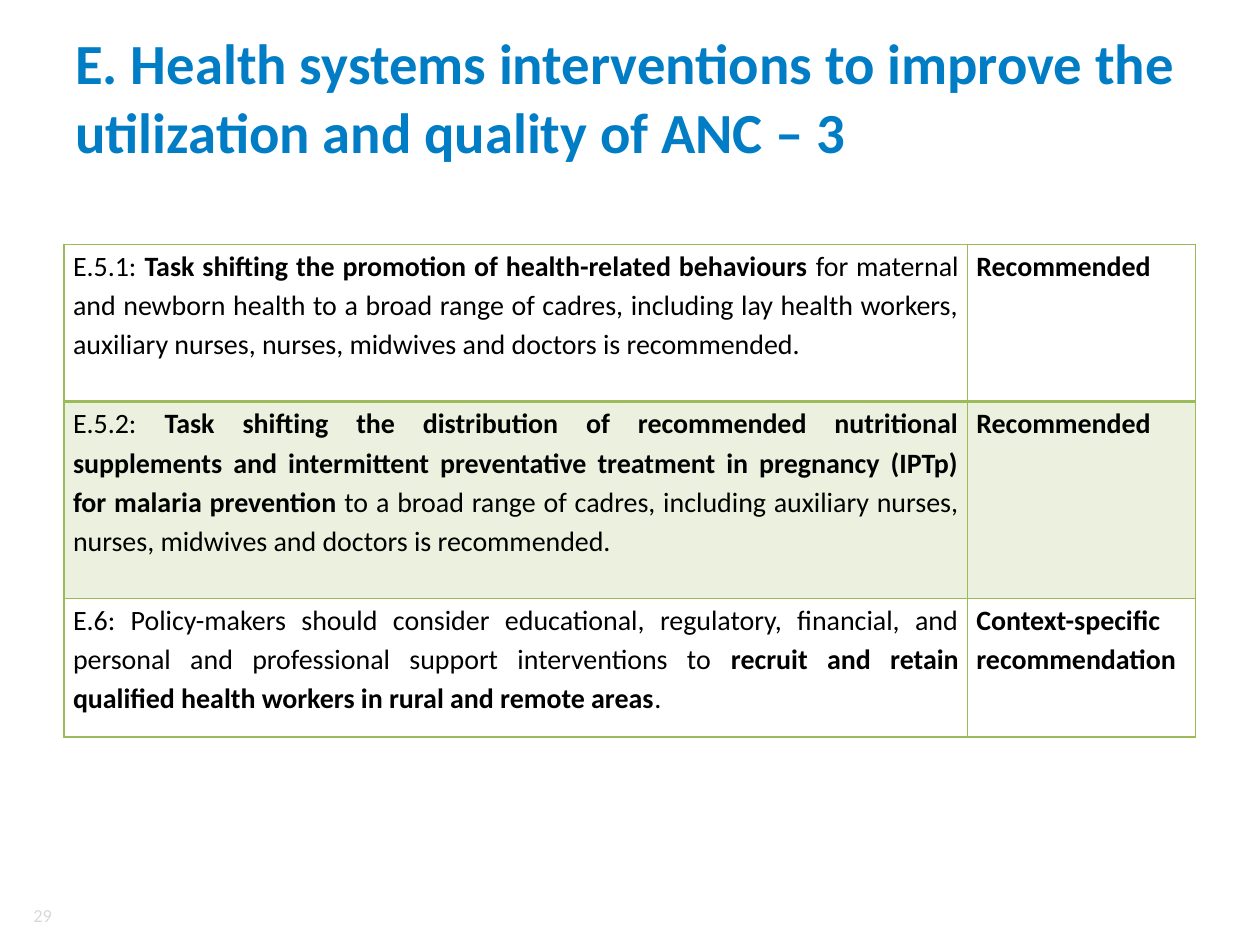
from lxml import etree
from pptx import Presentation
from pptx.dml.color import RGBColor
from pptx.enum.text import MSO_ANCHOR, PP_ALIGN
from pptx.oxml.ns import qn
from pptx.util import Inches, Pt

BLUE = RGBColor(0x00, 0x7D, 0xC5)
GREEN = RGBColor(0x9B, 0xBB, 0x59)
PALE_GREEN = RGBColor(0xEB, 0xF1, 0xDE)
GREY = RGBColor(0xD9, 0xD9, 0xD9)
BLACK = RGBColor(0, 0, 0)
FONT = "Calibri"

TITLE = "E. Health systems interventions to improve the utilization and quality of ANC – 3"
COLUMN_WIDTHS = (7.17, 1.81)
ROW_HEIGHTS = (1.25, 1.56, 1.1)
RECOMMENDATIONS = [
    (
        ("E.5.1: ",
         "Task shifting the promotion of health-related behaviours",
         " for maternal and newborn health to a broad range of cadres, including lay "
         "health workers, auxiliary nurses, nurses, midwives and doctors is recommended."),
        "Recommended",
    ),
    (
        ("E.5.2: ",
         "Task shifting the distribution of recommended nutritional supplements and "
         "intermittent preventative treatment in pregnancy (IPTp) for malaria prevention",
         " to a broad range of cadres, including auxiliary nurses, nurses, midwives "
         "and doctors is recommended."),
        "Recommended",
    ),
    (
        ("E.6: Policy-makers should consider educational, regulatory, financial, and "
         "personal and professional support interventions to ",
         "recruit and retain qualified health workers in rural and remote areas",
         "."),
        "Context-specific recommendation",
    ),
]


def style_font(font, size, color, bold=False):
    font.name = FONT
    font.size = Pt(size)
    font.color.rgb = color
    font.bold = bold


def add_label(slide, box, text, size, color, bold=False, align=PP_ALIGN.LEFT):
    s = slide.shapes.add_textbox(*map(Inches, box))
    tf = s.text_frame
    tf.word_wrap = True
    tf.vertical_anchor = MSO_ANCHOR.MIDDLE
    tf.text = text
    p = tf.paragraphs[0]
    p.alignment = align
    style_font(p.runs[0].font, size, color, bold)


def set_borders(cell, widths):
    tc_pr = cell._tc.get_or_add_tcPr()
    for side, width in widths.items():
        ln = etree.SubElement(tc_pr, qn(f"a:ln{side}"), w=str(Pt(width)))
        fill = etree.SubElement(ln, qn("a:solidFill"))
        etree.SubElement(fill, qn("a:srgbClr"), val=str(GREEN))


def fill_cell(cell, runs):
    cell.margin_left = cell.margin_right = Inches(0.07)
    cell.margin_top = cell.margin_bottom = 0
    p = cell.text_frame.paragraphs[0]
    p.alignment = PP_ALIGN.JUSTIFY
    p.line_spacing = 1.15
    for text, bold in runs:
        r = p.add_run()
        r.text = text
        style_font(r.font, 16, BLACK, bold)


def add_recommendations(slide, left, top):
    box = (left, top, sum(COLUMN_WIDTHS), sum(ROW_HEIGHTS))
    s = slide.shapes.add_table(len(ROW_HEIGHTS), len(COLUMN_WIDTHS), *map(Inches, box))
    table = s.table
    table.first_row = table.horz_banding = False
    for column, width in zip(table.columns, COLUMN_WIDTHS):
        column.width = Inches(width)
    for i, (advice, status) in enumerate(RECOMMENDATIONS):
        row = table.rows[i]
        row.height = Inches(ROW_HEIGHTS[i])
        fill_cell(row.cells[0], zip(advice, (False, True, False)))
        fill_cell(row.cells[1], [(status, True)])
        for cell in row.cells:
            set_borders(cell, {"L": 1, "R": 1, "T": 2 if i == 1 else 1, "B": 2 if i == 0 else 1})
            if i % 2:
                cell.fill.solid()
                cell.fill.fore_color.rgb = PALE_GREEN
            else:
                cell.fill.background()


def main():
    prs = Presentation()
    prs.slide_width, prs.slide_height = Inches(10), Inches(7.5)
    slide = prs.slides.add_slide(prs.slide_layouts[6])
    add_label(slide, (0.12, 7.14, 0.39, 0.24), "29", 10.5, GREY, align=PP_ALIGN.RIGHT)
    add_label(slide, (0.5, 0.3, 9, 0.93), TITLE, 32.4, BLUE, bold=True)
    add_recommendations(slide, 0.51, 1.94)
    prs.save("out.pptx")


if __name__ == "__main__":
    main()
